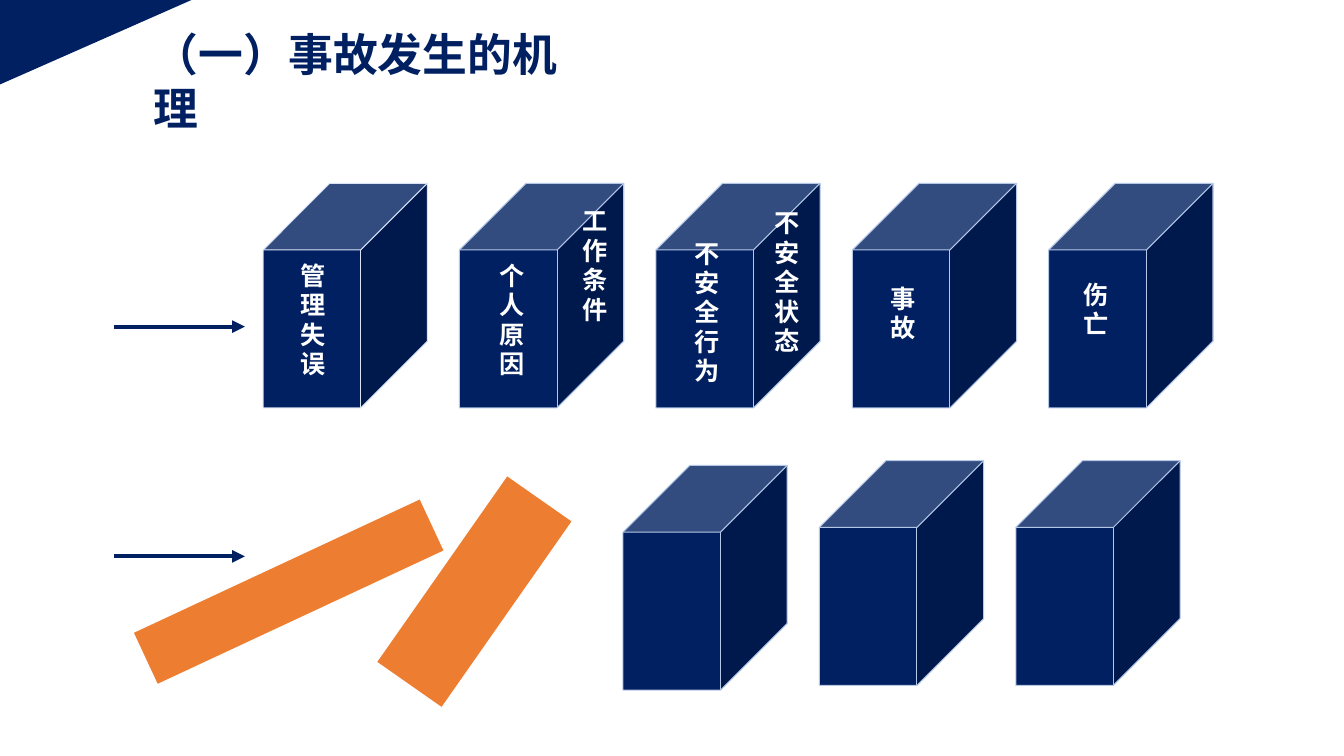
from pptx import Presentation
from pptx.dml.color import RGBColor
from pptx.enum.shapes import MSO_CONNECTOR, MSO_SHAPE
from pptx.enum.text import MSO_ANCHOR, MSO_AUTO_SIZE, PP_ALIGN
from pptx.oxml.ns import qn
from pptx.util import Cm, Pt
from lxml.etree import SubElement

FONT = "Noto Sans CJK SC"
NAVY, ORANGE, WHITE, PALE = "012061", "ED7D31", "FFFFFF", "B4C7E7"


def add_block(kind, box, fill, line=None):
    sp = s.shapes.add_shape(kind, *[Cm(v) for v in box])
    sp.shadow.inherit = False
    sp.fill.solid()
    sp.fill.fore_color.rgb = RGBColor.from_string(fill)
    if line:
        sp.line.color.rgb = RGBColor.from_string(line)
        sp.line.width = Pt(0.75)
    else:
        sp.line.fill.background()
    return sp


def add_text(text, box, size, color):
    tf = s.shapes.add_textbox(*[Cm(v) for v in box]).text_frame
    tf.word_wrap = True
    tf.auto_size = MSO_AUTO_SIZE.SHAPE_TO_FIT_TEXT
    tf.text = text
    r = tf.paragraphs[0].runs[0]
    r.font.size = Pt(size)
    r.font.bold = True
    r.font.name = FONT
    r.font.color.rgb = RGBColor.from_string(color)
    SubElement(r.font._element, qn("a:ea")).set("typeface", FONT)
    return tf


prs = Presentation()
prs.slide_width, prs.slide_height = Cm(33.87), Cm(19.05)
s = prs.slides.add_slide(prs.slide_layouts[6])

# Title and corner triangle
add_text("（一）事故发生的机理", (3.63, 0.56, 11.7, 1.6), 32, NAVY)
corner = add_block(MSO_SHAPE.RIGHT_TRIANGLE, (0, 0, 4.83, 2.13), NAVY)
corner._element.spPr.xfrm.set("flipV", "1")

# Dominoes: five standing above, three left standing below
upper = [(6.63 + 4.95 * i, 4.62) for i in range(5)]
lower = [(15.7, 11.73), (20.65, 11.61), (25.6, 11.61)]
for i, (x, y) in enumerate(upper + lower):
    cube = add_block(MSO_SHAPE.CUBE, (x, y, 4.14, 5.66), NAVY, PALE if i else "DAE3F3")
    cube.adjustments[0] = 0.406

# Arrows pushing each row
for y in (8.23, 14.02):
    arrow = s.shapes.add_connector(MSO_CONNECTOR.STRAIGHT, Cm(2.87), Cm(y), Cm(6.17), Cm(y))
    arrow.line.color.rgb = RGBColor.from_string(NAVY)
    arrow.line.width = Pt(3)
    SubElement(arrow.line._get_or_add_ln(), qn("a:tailEnd")).set("type", "triangle")
    SubElement(arrow._element.spPr, qn("a:effectLst"))

# Fallen dominoes
for box, angle in [((10.95, 12.04, 2.01, 5.74), 35), ((6.55, 10.92, 1.45, 7.98), 65)]:
    add_block(MSO_SHAPE.RECTANGLE, box, ORANGE, WHITE).rotation = angle

# Vertical labels: text, left, top, height
labels = [
    ("管理失误", 7.49, 6.63, 3.43),
    ("个人原因", 12.52, 6.63, 3.45),
    ("工作条件", 14.61, 5.26, 4.5),
    ("不安全行为", 17.42, 6.07, 4.55),
    ("不安全状态", 19.43, 5.31, 4.55),
    ("事故", 22.35, 7.21, 2.03),
    ("伤亡", 27.23, 7.11, 2.24),
]
for text, x, y, h in labels:
    tf = add_text(text, (x, y, 0.75, h), 18, WHITE)
    tf.margin_left = tf.margin_right = tf.margin_top = tf.margin_bottom = 0
    tf.vertical_anchor = MSO_ANCHOR.MIDDLE
    tf._bodyPr.set("vert", "eaVert")
    p = tf.paragraphs[0]
    p.alignment = PP_ALIGN.JUSTIFY
    p.runs[0].font._element.set("spc", "300")

prs.save("out.pptx")
